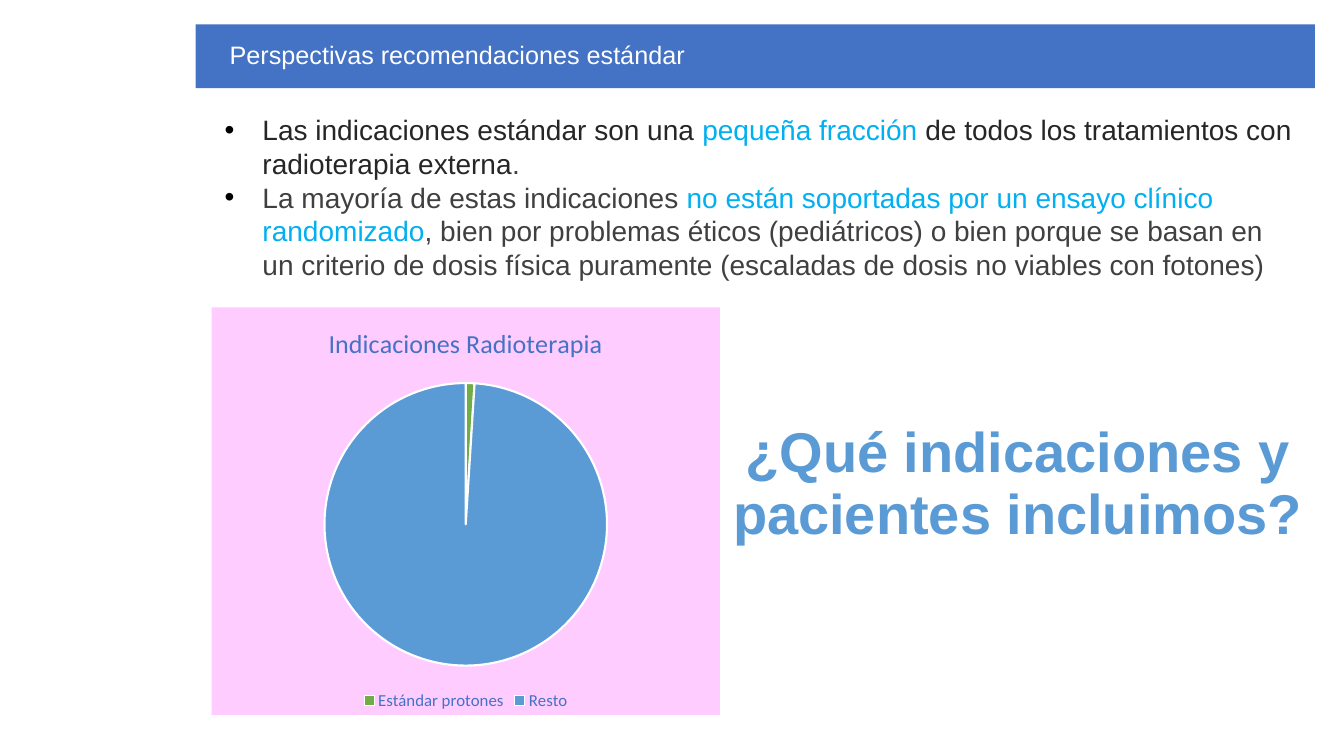
from dataclasses import dataclass

from lxml import etree
from pptx import Presentation
from pptx import util as u
from pptx.chart import data
from pptx.dml import color
from pptx.enum import chart as ch
from pptx.enum import shapes, text
from pptx.oxml import ns


@dataclass(frozen=True)
class Theme:
    face: str = "Arial"
    label: str = "Calibri"
    white: str = "FFFFFF"
    black: str = "000000"
    bar: str = "4472C4"
    dark: str = "262626"
    gray: str = "404040"
    cyan: str = "00B0F0"
    sky: str = "5B9BD5"
    green: str = "70AD47"
    pink: str = "FFCCFF"
    head: float = 18
    body: float = 20
    big: float = 40
    title: float = 18.6
    key: float = 12
    base: float = 10


def rgb(code):
    return color.RGBColor.from_string(code)


def assign(item, values):
    for name, value in values.items():
        setattr(item, name, value)


def add(parent, tag, **attrs):
    node = etree.SubElement(parent, ns.qn(tag))
    for name, value in attrs.items():
        node.set(name, str(value))
    return node


def paint(parent, code):
    add(add(parent, "a:solidFill"), "a:srgbClr", val=code)


class Deck:
    def __init__(self, theme):
        self.theme = theme
        self.show = Presentation()
        assign(self.show, {"slide_width": u.Pt(960), "slide_height": u.Pt(540)})
        self.slide = self.show.slides.add_slide(self.show.slide_layouts[6])

    def style(self, font, size, code, face, bold=False):
        assign(font, {"size": u.Pt(size), "name": face, "bold": bold})
        font.color.rgb = rgb(code)

    def fill(self, para, runs, size, bold=False):
        for words, code in runs:
            run = para.add_run()
            run.text = words
            self.style(run.font, size, code, self.theme.face, bold)

    def banner(self, box, words):
        t = self.theme
        bar = self.slide.shapes.add_shape(shapes.MSO_SHAPE.RECTANGLE, *map(u.Pt, box))
        bar.shadow.inherit = False
        bar.fill.solid()
        bar.fill.fore_color.rgb = rgb(t.bar)
        bar.line.fill.background()
        assign(bar.text_frame, {"word_wrap": True, "vertical_anchor": text.MSO_ANCHOR.MIDDLE})
        para = bar.text_frame.paragraphs[0]
        assign(para, {"alignment": text.PP_ALIGN.LEFT, "line_spacing": 0.93})
        para._p.get_or_add_pPr().set("marL", str(u.Pt(17.3)))
        self.fill(para, [(words, t.white)], t.head)

    def frame(self, box):
        frame = self.slide.shapes.add_textbox(*map(u.Pt, box)).text_frame
        frame.word_wrap = True
        return frame

    def bullets(self, box, items):
        frame = self.frame(box)
        for i, runs in enumerate(items):
            para = frame.add_paragraph() if i else frame.paragraphs[0]
            para.space_after = u.Pt(0.1)
            props = para._p.get_or_add_pPr()
            for name, value in {"marL": u.Pt(27), "indent": -u.Pt(27)}.items():
                props.set(name, str(value))
            add(add(props, "a:buClr"), "a:srgbClr", val=self.theme.black)
            add(props, "a:buFont", typeface=self.theme.face)
            add(props, "a:buChar", char="•")
            self.fill(para, runs, self.theme.body)

    def question(self, box, words):
        t = self.theme
        para = self.frame(box).paragraphs[0]
        assign(para, {"alignment": text.PP_ALIGN.CENTER, "line_spacing": 0.93})
        self.fill(para, [(words, t.sky)], t.big, True)
        props = para.runs[0]._r.get_or_add_rPr()
        line = add(props, "a:ln", w=u.Pt(0.75))
        paint(line, t.white)
        props.insert(0, line)

    def pie(self, box, name, parts):
        t = self.theme
        table = data.CategoryChartData()
        table.categories = [label for label, _, _ in parts]
        table.add_series(name, [value for _, value, _ in parts])
        kind = ch.XL_CHART_TYPE.PIE
        pie = self.slide.shapes.add_chart(kind, *map(u.Pt, box), table).chart
        self.style(pie.font, t.base, t.black, t.label)
        assign(pie, {"has_title": True, "has_legend": True})
        para = pie.chart_title.text_frame.paragraphs[0]
        run = para.add_run()
        run.text = name
        self.style(run.font, t.title, t.bar, t.label)
        assign(pie.legend, {"position": ch.XL_LEGEND_POSITION.BOTTOM, "include_in_layout": False})
        self.style(pie.legend.font, t.key, t.bar, t.label)
        pie.plots[0].vary_by_categories = True
        for i, (_, _, code) in enumerate(parts):
            form = pie.plots[0].series[0].points[i].format
            form.fill.solid()
            form.fill.fore_color.rgb = rgb(code)
            form.line.color.rgb = rgb(t.white)
            form.line.width = u.Pt(1.5)
        root = pie._chartSpace
        back = add(root, "c:spPr")
        paint(back, t.pink)
        add(add(back, "a:ln"), "a:noFill")
        root.find(ns.qn("c:chart")).addnext(back)


def main():
    t = Theme()
    deck = Deck(t)
    deck.banner((139.7, 17.5, 799.5, 45.5), "Perspectivas recomendaciones estándar")
    deck.bullets((153.4, 77, 780.5, 128), [
        [("Las indicaciones estándar son una ", t.dark),
         ("pequeña fracción ", t.cyan),
         ("de todos los tratamientos con radioterapia externa", t.dark),
         (".", t.gray)],
        [("La mayoría de estas indicaciones ", t.gray),
         ("no están soportadas por un ensayo clínico randomizado", t.cyan),
         (", bien por problemas éticos (pediátricos) o bien porque se basan en un criterio "
          "de dosis física puramente (escaladas de dosis no viables con fotones)", t.gray)],
    ])
    deck.pie((151.2, 219.6, 363, 291), "Indicaciones Radioterapia", [
        ("Estándar protones", 1, t.green),
        ("Resto", 99, t.sky),
    ])
    deck.question((514, 298, 425.5, 97), "¿Qué indicaciones y pacientes incluimos?")
    deck.show.save("out.pptx")


if __name__ == "__main__":
    main()
